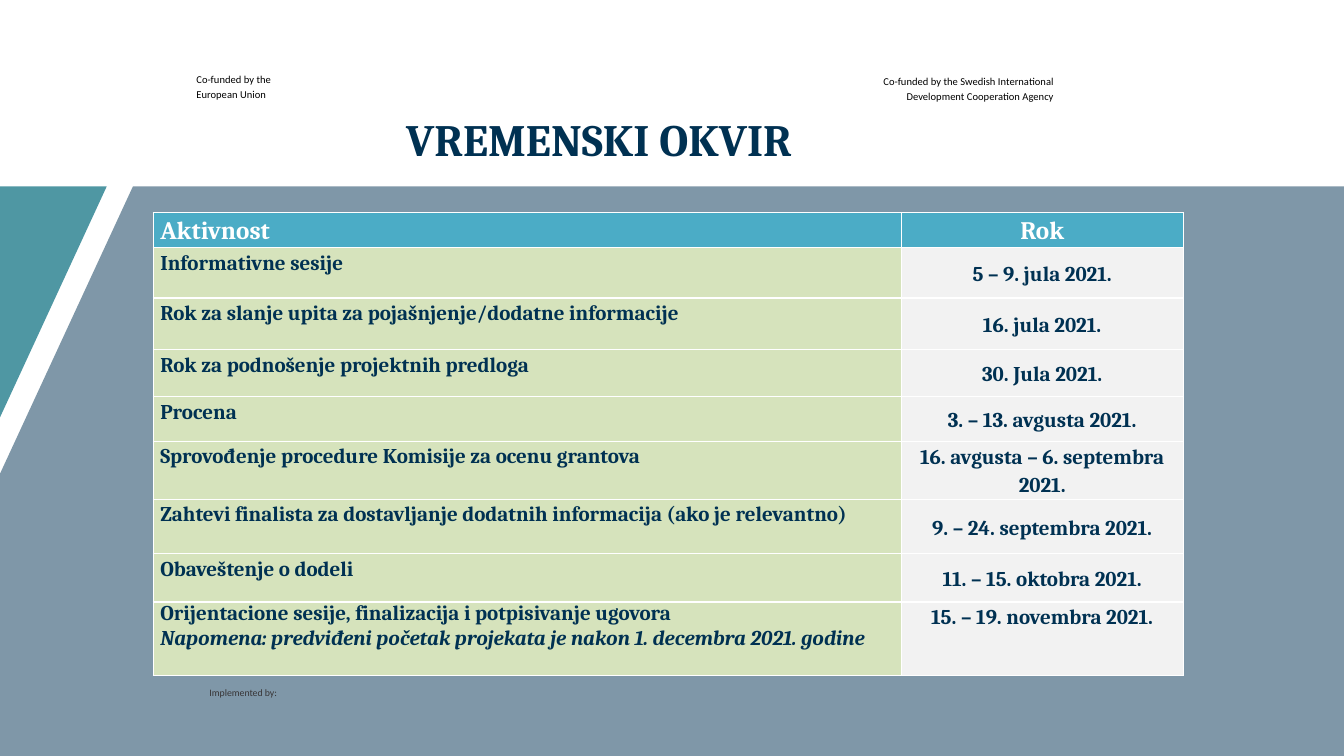
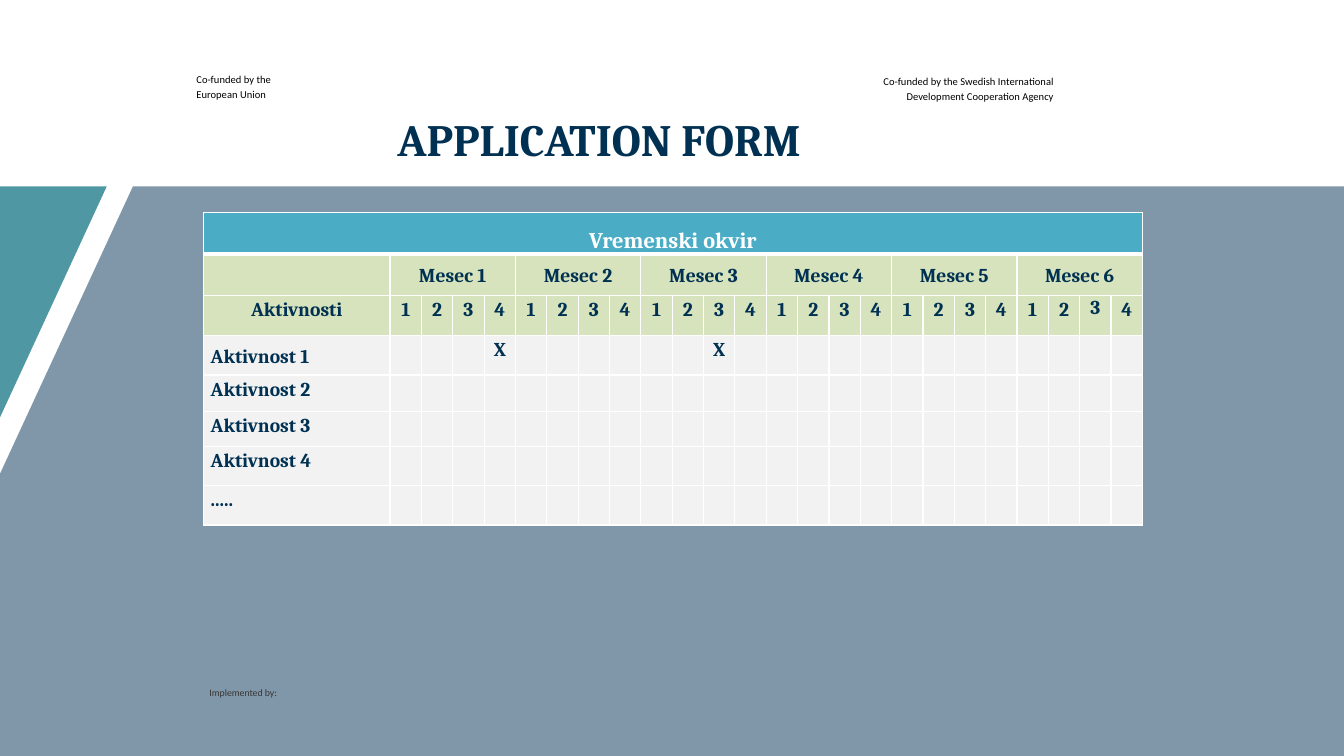
from lxml import etree
from pptx import Presentation
from pptx.dml.color import RGBColor
from pptx.enum.text import MSO_ANCHOR, PP_ALIGN
from pptx.oxml.ns import qn
from pptx.util import Cm, Pt

LEFT, MID, RIGHT = PP_ALIGN.LEFT, PP_ALIGN.CENTER, PP_ALIGN.RIGHT
JUST = PP_ALIGN.JUSTIFY
TOP, HALF, LOW = MSO_ANCHOR.TOP, MSO_ANCHOR.MIDDLE, MSO_ANCHOR.BOTTOM
HEAD, BODY = "Cambria", "Calibri"
COLOR = {
    "white": "FFFFFF", "black": "000000", "grey": "373435", "navy": "003152",
    "teal": "4F97A3", "blue": "4BACC6", "green": "D6E3BC", "pale": "F2F2F2",
}
WIDE, TALL = 33.87, 19.05
BAND = (0, 4.7, WIDE, TALL - 4.7)
TITLE = (3, 2.46, 24.2, 2.24)
NOTES = [
    ((4.95, 1.8, 2.6, 0.76), "Co-funded by the European Union", 7.5, "black", LEFT, 1.15),
    ((21.8, 1.85, 4.75, 0.8),
     "Co-funded by the Swedish International Development Cooperation Agency",
     7.5, "black", RIGHT, 1.15),
    ((5.28, 17.3, 3.6, 0.5), "Implemented by:", 7, "grey", JUST, 1),
]
DATES = [
    ("Informativne sesije", "5 – 9. jula 2021.", 1.27),
    ("Rok za slanje upita za pojašnjenje/dodatne informacije", "16. jula 2021.", 1.3),
    ("Rok za podnošenje projektnih predloga", "30. Jula 2021.", 1.19),
    ("Procena", "3. – 13. avgusta 2021.", 1.12),
    ("Sprovođenje procedure Komisije za ocenu grantova",
     "16. avgusta – 6. septembra 2021.", 1.12),
    ("Zahtevi finalista za dostavljanje dodatnih informacija (ako je relevantno)",
     "9. – 24. septembra 2021.", 1.37),
    ("Obaveštenje o dodeli", "11. – 15. oktobra 2021.", 1.22),
]
LAST = ("Orijentacione sesije, finalizacija i potpisivanje ugovora",
        "Napomena: predviđeni početak projekata je nakon 1. decembra 2021. godine",
        "15. – 19. novembra 2021.", 1.85)
TASKS = [("Aktivnost 1", 0.99), ("Aktivnost 2", 0.91), ("Aktivnost 3", 0.89),
         ("Aktivnost 4", 0.99), (".....", 0.99)]
MARKS = [4, 11]
MONTHS, WEEKS = 6, 4


def paint(fill, name):
    """Fill with a named colour."""
    fill.solid()
    fill.fore_color.rgb = RGBColor.from_string(COLOR[name])


def write(par, text, size, color, font=HEAD, bold=True, slant=False):
    """Add one run to a paragraph."""
    run = par.add_run()
    run.text = text
    face = run.font
    face.name, face.size, face.bold, face.italic = font, Pt(size), bold, slant
    face.color.rgb = RGBColor.from_string(COLOR[color])


def space(par, align, line, after=0):
    """Set the alignment and spacing of a paragraph."""
    par.alignment, par.line_spacing, par.space_after = align, line, Pt(after)


def note(slide, box, text, size, color, align, line):
    """Place a small text without margins."""
    frame = slide.shapes.add_textbox(*map(Cm, box)).text_frame
    frame.word_wrap = True
    frame.margin_left = frame.margin_right = frame.margin_top = frame.margin_bottom = 0
    par = frame.paragraphs[0]
    space(par, align, line)
    write(par, text, size, color, BODY, False)


def shape(slide, box, points, color):
    """Draw a plain outline from points inside a box."""
    spots = [(Cm(box[0] + x), Cm(box[1] + y)) for x, y in points]
    form = slide.shapes.build_freeform(*spots[0], scale=1)
    form.add_line_segments(spots[1:], close=True)
    part = form.convert_to_shape()
    part.shadow.inherit = False
    paint(part.fill, color)
    part.line.fill.background()
    return part


def band(slide, box):
    """Draw the tinted band with its slanted corner."""
    wide, tall = box[2:]
    part = shape(slide, box, [(3.35, 0), (wide, 0), (wide, tall), (0, tall), (0, 7.24)], "navy")
    tint = part.fill._xPr.find(".//" + qn("a:srgbClr"))
    etree.SubElement(tint, qn("a:alpha"), val="50000")
    shape(slide, box, [(0, 0), (2.69, 0), (0, 5.82)], "teal")


def base(deck, text):
    """Start a slide with the shared parts and a title."""
    slide = deck.slides.add_slide(deck.slide_layouts[5])
    band(slide, BAND)
    for item in NOTES:
        note(slide, *item)
    title = slide.shapes.title
    title.left, title.top, title.width, title.height = map(Cm, TITLE)
    frame = title.text_frame
    frame.vertical_anchor = HALF
    par = frame.paragraphs[0]
    space(par, MID, 0.9)
    write(par, text, 32, "navy")
    return slide


def edge(cell, low):
    """Give a cell white borders."""
    props = cell._tc.get_or_add_tcPr()
    for side, width in (("L", 1), ("R", 1), ("T", 1), ("B", low)):
        line = etree.SubElement(props, qn("a:ln" + side), w=str(Pt(width)))
        fill = etree.SubElement(line, qn("a:solidFill"))
        etree.SubElement(fill, qn("a:srgbClr"), val=COLOR["white"])


def grid(slide, spot, cols, rows, fill, low=1):
    """Add a table whose cell fills follow a rule of row and column."""
    box = (*spot, sum(cols), sum(rows))
    table = slide.shapes.add_table(len(rows), len(cols), *map(Cm, box)).table
    table.first_row = table.horz_banding = False
    for col, wide in zip(table.columns, cols):
        col.width = Cm(wide)
    for r, tall in enumerate(rows):
        table.rows[r].height = Cm(tall)
        for c in range(len(cols)):
            cell = table.cell(r, c)
            cell.margin_left = cell.margin_right = Cm(0.18)
            cell.margin_top = cell.margin_bottom = 0
            edge(cell, 1 if r else low)
            paint(cell.fill, fill(r, c))
    return table


def put(cell, text, size, color="navy", align=LEFT, anchor=TOP, line=1.15):
    """Write one paragraph in a cell."""
    cell.vertical_anchor = anchor
    par = cell.text_frame.paragraphs[0]
    space(par, align, line, 10)
    write(par, text, size, color)


def dates(slide, spot):
    """Place the table of deadlines."""
    rows = [0.84, *(row[2] for row in DATES), LAST[3]]
    table = grid(slide, spot, [18.85, 7.11], rows,
                 lambda r, c: "blue" if r == 0 else ("green", "pale")[c])
    put(table.cell(0, 0), "Aktivnost", 18, "white")
    put(table.cell(0, 1), "Rok", 18, "white", MID)
    for r, (task, day, tall) in enumerate(DATES, 1):
        put(table.cell(r, 0), task, 15)
        put(table.cell(r, 1), day, 15, align=MID, anchor=HALF)
    end = len(rows) - 1
    frame = table.cell(end, 0).text_frame
    write(frame.paragraphs[0], LAST[0], 15, "navy")
    write(frame.add_paragraph(), LAST[1], 15, "navy", slant=True)
    put(table.cell(end, 1), LAST[2], 15, align=MID)


def plan(slide, spot):
    """Place the chart of months and weeks."""
    count = MONTHS * WEEKS
    rows = [1.04, 1.04, 1.02, *(row[1] for row in TASKS)]
    table = grid(slide, spot, [4.7] + [0.79] * count, rows,
                 lambda r, c: ("blue", "green", "green")[r] if r < 3 else "pale", 3)
    table.cell(0, 0).merge(table.cell(0, count))
    put(table.cell(0, 0), "Vremenski okvir", 16, "white", MID, LOW)
    put(table.cell(2, 0), "Aktivnosti", 14, align=MID)
    for month in range(MONTHS):
        first = 1 + month * WEEKS
        head = table.cell(1, first)
        head.merge(table.cell(1, first + WEEKS - 1))
        put(head, f"Mesec {month + 1}", 14, align=MID, anchor=HALF)
        for week in range(WEEKS):
            col = first + week
            put(table.cell(2, col), str(week + 1), 14, align=MID,
                line=1.07 if col == count - 1 else 1.15)
    for r, (task, tall) in enumerate(TASKS, 3):
        put(table.cell(r, 0), task, 14, anchor=HALF if r == 3 else TOP)
    for col in MARKS:
        put(table.cell(3, col), "X", 14, align=MID)


def main():
    """Build and save the slides."""
    deck = Presentation()
    deck.slide_width, deck.slide_height = Cm(WIDE), Cm(TALL)
    dates(base(deck, "VREMENSKI OKVIR"), (3.86, 5.36))
    plan(base(deck, "APPLICATION FORM"), (5.13, 5.36))
    deck.save("out.pptx")


if __name__ == "__main__":
    main()
